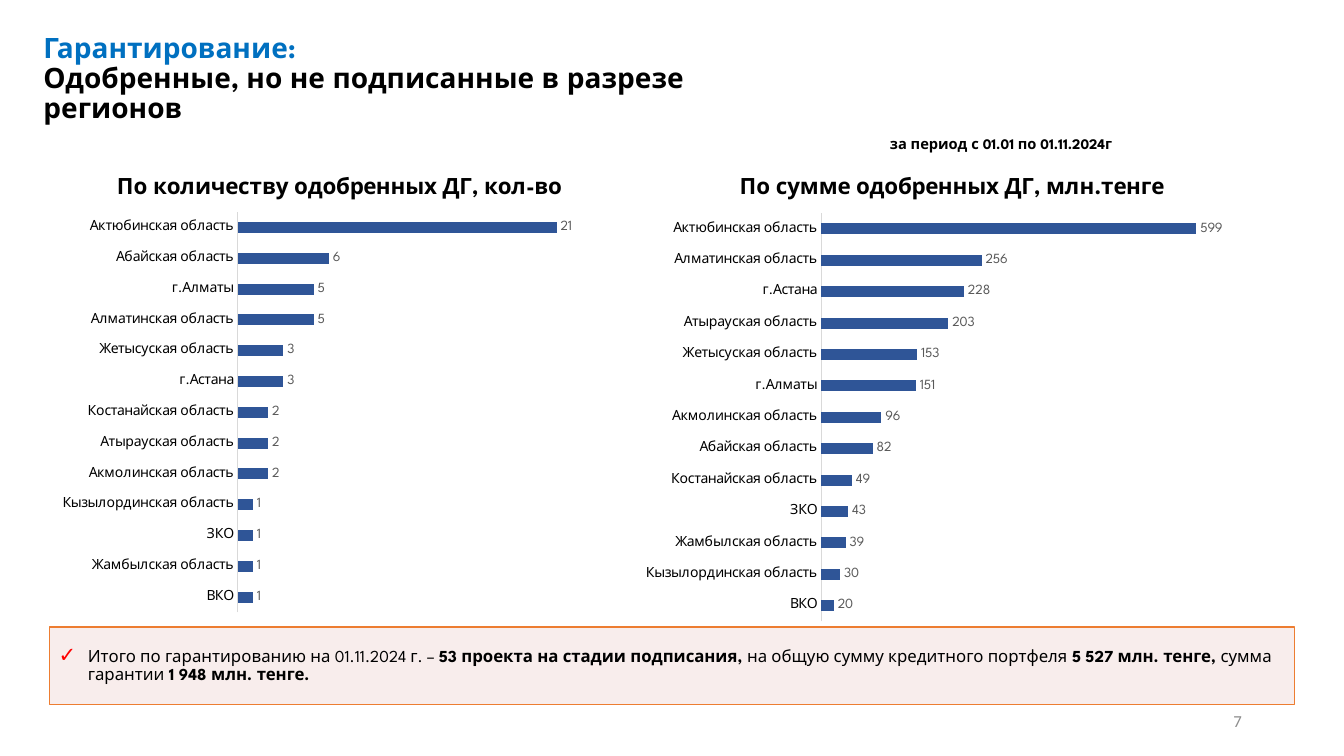
from dataclasses import dataclass

from lxml import etree
from pptx import Presentation
from pptx.chart.chart import Chart
from pptx.chart.data import CategoryChartData
from pptx.dml.color import RGBColor
from pptx.enum.chart import XL_CHART_TYPE, XL_LABEL_POSITION, XL_TICK_MARK
from pptx.enum.text import MSO_ANCHOR, MSO_AUTO_SIZE, PP_ALIGN
from pptx.oxml import parse_xml
from pptx.oxml.ns import nsdecls, qn
from pptx.slide import Slide
from pptx.text.text import Font
from pptx.util import Pt

BAR = XL_CHART_TYPE.BAR_CLUSTERED
OUTER = XL_LABEL_POSITION.OUTSIDE_END
NO_TICK = XL_TICK_MARK.NONE
TOP, MIDDLE = MSO_ANCHOR.TOP, MSO_ANCHOR.MIDDLE
FIXED = MSO_AUTO_SIZE.NONE
LEFT, RIGHT = PP_ALIGN.LEFT, PP_ALIGN.RIGHT
FACE = "League Spartan"
BLACK = "000000"
PLOT_TOP, PLOT_HIGH = 0.118, 0.86


@dataclass
class Box:
    left: float
    top: float
    width: float
    height: float

    def args(self) -> tuple[Pt, Pt, Pt, Pt]:
        return Pt(self.left), Pt(self.top), Pt(self.width), Pt(self.height)


@dataclass
class Bars:
    title: str
    box: Box
    plot_left: float
    plot_wide: float
    peak: int
    rows: dict[str, int]


@dataclass
class Label:
    text: str
    box: Box
    size: float
    face: str
    color: str
    bold: bool
    align: PP_ALIGN
    wrap: bool


CHARTS = [
    Bars("По количеству одобренных ДГ, кол-во", Box(36, 112.3, 413.3, 332.6),
         0.324, 0.656, 25, {
             "ВКО": 1, "Жамбылская область": 1, "ЗКО": 1,
             "Кызылординская область": 1, "Акмолинская область": 2,
             "Атырауская область": 2, "Костанайская область": 2,
             "г.Астана": 3, "Жетысуская область": 3,
             "Алматинская область": 5, "г.Алматы": 5,
             "Абайская область": 6, "Актюбинская область": 21}),
    Bars("По сумме одобренных ДГ, млн.тенге", Box(452.2, 112.3, 455.8, 339.1),
         0.295, 0.687, 700, {
             "ВКО": 20, "Кызылординская область": 30,
             "Жамбылская область": 39, "ЗКО": 43,
             "Костанайская область": 49, "Абайская область": 82,
             "Акмолинская область": 96, "г.Алматы": 151,
             "Жетысуская область": 153, "Атырауская область": 203,
             "г.Астана": 228, "Алматинская область": 256,
             "Актюбинская область": 599}),
]
LABELS = [
    Label("за период с 01.01 по 01.11.2024г", Box(628.6, 92.2, 185.8, 20.2),
          10.5, FACE, BLACK, True, LEFT, False),
    Label("7", Box(678.2, 500.4, 216, 28.8),
          12, "Calibri", "8C8C8C", False, RIGHT, True),
]
TOTAL = [
    ("Итого по гарантированию на 01.11.2024 г. – ", False),
    ("53 проекта на стадии подписания, ", True),
    ("на общую сумму кредитного портфеля ", False),
    ("5 527 млн. тенге, ", True),
    ("сумма гарантии", False),
    (" 1 948 млн. тенге.", True),
]


def rgb(code: str) -> RGBColor:
    return RGBColor.from_string(code)


def style(font: Font, size: float, color: str, bold: bool = False,
          face: str = FACE) -> None:
    font.name, font.size, font.bold = face, Pt(size), bold
    font.color.rgb = rgb(color)


def place(shape, box: Box) -> None:
    shape.left, shape.top, shape.width, shape.height = box.args()


def add_title(slide: Slide) -> None:
    shape = slide.shapes.title
    place(shape, Box(23.8, 20.9, 566.6, 79.9))
    frame = shape.text_frame
    frame.auto_size, frame.vertical_anchor = FIXED, TOP
    para = frame.paragraphs[0]
    para.alignment, para.line_spacing = LEFT, 0.9
    style(para.font, 20, BLACK, True)
    head = para.add_run()
    head.text = "Гарантирование:"
    head.font.color.rgb = rgb("0070C0")
    para.add_line_break()
    para.add_run().text = "Одобренные, но не подписанные в разрезе регионов"


def add_total(slide: Slide) -> None:
    shape = slide.placeholders[1]
    place(shape, Box(35.3, 447.8, 889.2, 55.4))
    shape.fill.solid()
    shape.fill.fore_color.rgb = rgb("F2DCDB")
    tint = shape.fill._xPr.find(qn("a:solidFill"))[0]
    etree.SubElement(tint, qn("a:alpha"), val="50000")
    shape.line.color.rgb = rgb("ED7D31")
    shape.line.width = Pt(1)
    frame = shape.text_frame
    frame.auto_size, frame.vertical_anchor = FIXED, MIDDLE
    frame.margin_left = frame.margin_right = Pt(5.8)
    frame.margin_top = frame.margin_bottom = Pt(2.9)
    para = frame.paragraphs[0]
    props = para._p.get_or_add_pPr()
    props.set("marL", str(Pt(21.6)))
    props.set("indent", str(Pt(-20.9)))
    color = etree.SubElement(props, qn("a:buClr"))
    etree.SubElement(color, qn("a:srgbClr"), val="FF0000")
    etree.SubElement(props, qn("a:buSzPct"), val="125000")
    etree.SubElement(props, qn("a:buChar"), char="✓")
    para.line_spacing, para.space_before, para.space_after = 0.9, Pt(0), Pt(6)
    style(para.font, 12, BLACK)
    for text, bold in TOTAL:
        run = para.add_run()
        run.text, run.font.bold = text, bold


def add_label(slide: Slide, label: Label) -> None:
    frame = slide.shapes.add_textbox(*label.box.args()).text_frame
    frame.word_wrap, frame.vertical_anchor = label.wrap, MIDDLE
    para = frame.paragraphs[0]
    para.text, para.alignment = label.text, label.align
    style(para.font, label.size, label.color, label.bold, label.face)


def fit_plot(chart: Chart, bars: Bars) -> None:
    """Clear the chart's background and fix its plot area."""
    body = chart.element.find(qn("c:chart"))
    body.addnext(parse_xml(
        f'<c:spPr {nsdecls("c", "a")}><a:noFill/>'
        '<a:ln><a:noFill/></a:ln></c:spPr>'))
    area = body.find(qn("c:plotArea"))
    for old in area.findall(qn("c:layout")):
        area.remove(old)
    layout = etree.Element(qn("c:layout"))
    manual = etree.SubElement(layout, qn("c:manualLayout"))
    for tag, val in (("layoutTarget", "inner"), ("xMode", "edge"),
                     ("yMode", "edge"), ("x", bars.plot_left),
                     ("y", PLOT_TOP), ("w", bars.plot_wide),
                     ("h", PLOT_HIGH)):
        etree.SubElement(manual, qn(f"c:{tag}"), val=str(val))
    area.insert(0, layout)


def add_bars(slide: Slide, bars: Bars) -> None:
    data = CategoryChartData(number_format="#,##0")
    data.categories = list(bars.rows)
    data.add_series("Series 1", list(bars.rows.values()))
    chart = slide.shapes.add_chart(BAR, *bars.box.args(), data).chart
    fit_plot(chart, bars)
    style(chart.font, 10, BLACK)
    chart.has_legend = False
    para = chart.chart_title.text_frame.paragraphs[0]
    para.text = bars.title
    style(para.font, 16, BLACK, True)
    chart.chart_title.include_in_layout = False
    names, scale = chart.category_axis, chart.value_axis
    names.major_tick_mark = names.minor_tick_mark = NO_TICK
    names.format.line.color.rgb = rgb("D9D9D9")
    names.format.line.width = Pt(0.75)
    style(names.tick_labels.font, 10, BLACK)
    scale.visible = scale.has_major_gridlines = False
    scale.minimum_scale, scale.maximum_scale = 0, bars.peak
    plot = chart.plots[0]
    plot.gap_width, plot.vary_by_categories = 182, False
    fill = plot.series[0].format.fill
    fill.solid()
    fill.fore_color.rgb = rgb("2F5597")
    plot.has_data_labels = True
    marks = plot.data_labels
    marks.show_value, marks.position = True, OUTER
    marks.number_format, marks.number_format_is_linked = "#,##0", False
    style(marks.font, 10, "595959")


def main() -> None:
    deck = Presentation()
    deck.slide_width, deck.slide_height = Pt(960), Pt(540)
    slide = deck.slides.add_slide(deck.slide_layouts[1])
    add_title(slide)
    add_total(slide)
    for bars in CHARTS:
        add_bars(slide, bars)
    for label in LABELS:
        add_label(slide, label)
    deck.save("out.pptx")


if __name__ == "__main__":
    main()
